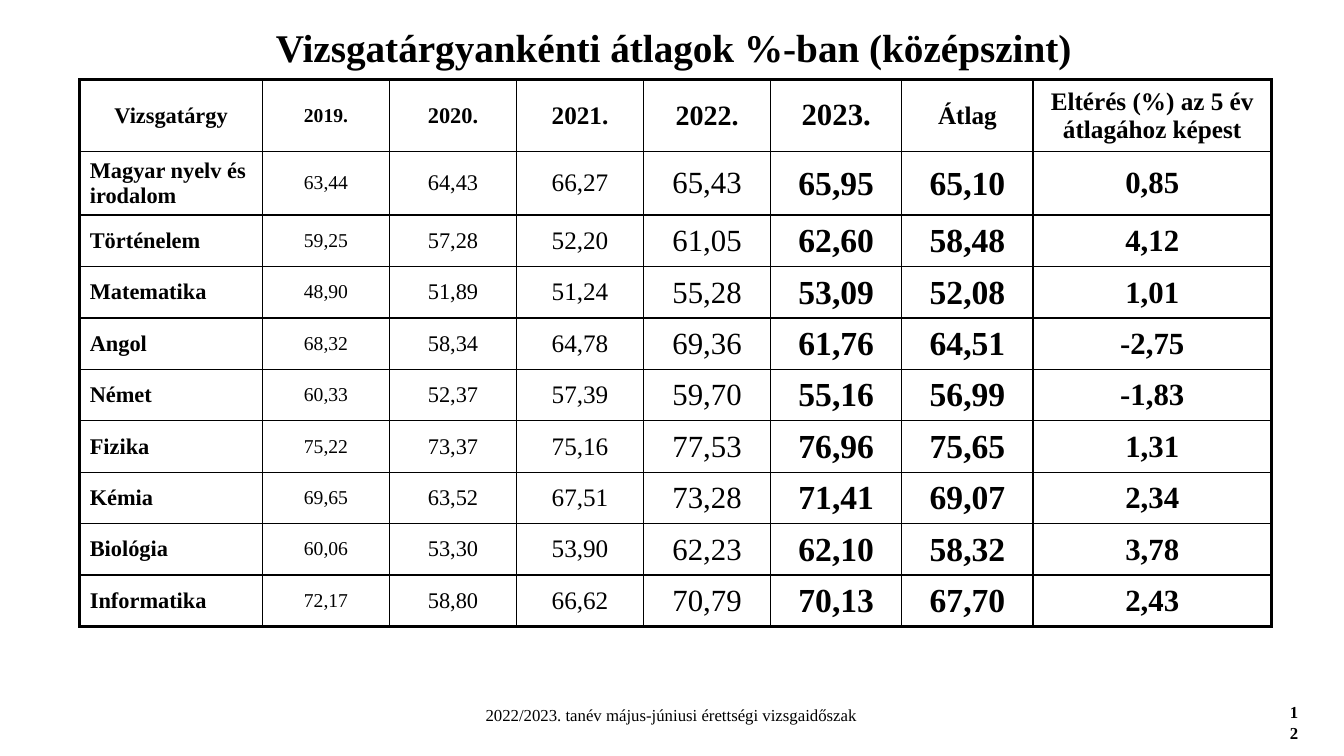
from lxml.etree import SubElement
from pptx import Presentation
from pptx.dml.color import RGBColor
from pptx.enum.text import MSO_ANCHOR as ANCHOR, MSO_AUTO_SIZE as AUTO, PP_ALIGN as ALIGN
from pptx.oxml.ns import qn
from pptx.util import Emu, Pt

BLACK = RGBColor(0x00, 0x00, 0x00)
FONT = "Times New Roman"
THIN, THICK = 1, 2.25

COLUMN_WIDTHS = [174] + [121] * 4 + [125] * 2 + [227]
ROW_HEIGHTS = [68, 57] + [49] * 8
HEADER_SIZES = [16, 14, 16, 18, 20, 22, 18, 18]
BODY_SIZES = [16, 14, 16, 18, 22, 24, 24, 22]
REGULAR_COLUMNS = range(1, 5)
TIGHT_COLUMNS = range(4, 8)

RESULTS = [
    ["Vizsgatárgy", "2019.", "2020.", "2021.", "2022.", "2023.", "Átlag",
     "Eltérés (%) az 5 év átlagához képest"],
    ["Magyar nyelv és irodalom", "63,44", "64,43", "66,27", "65,43", "65,95", "65,10", "0,85"],
    ["Történelem", "59,25", "57,28", "52,20", "61,05", "62,60", "58,48", "4,12"],
    ["Matematika", "48,90", "51,89", "51,24", "55,28", "53,09", "52,08", "1,01"],
    ["Angol", "68,32", "58,34", "64,78", "69,36", "61,76", "64,51", "-2,75"],
    ["Német", "60,33", "52,37", "57,39", "59,70", "55,16", "56,99", "-1,83"],
    ["Fizika", "75,22", "73,37", "75,16", "77,53", "76,96", "75,65", "1,31"],
    ["Kémia", "69,65", "63,52", "67,51", "73,28", "71,41", "69,07", "2,34"],
    ["Biológia", "60,06", "53,30", "53,90", "62,23", "62,10", "58,32", "3,78"],
    ["Informatika", "72,17", "58,80", "66,62", "70,79", "70,13", "67,70", "2,43"],
]


def px(n):
    return Emu(n * 9525)


class SlideBuilder:
    def __init__(self, prs, font, color):
        self.s = prs.slides.add_slide(prs.slide_layouts[5])
        self.font, self.color = font, color

    def set_text(self, tf, text, size, bold, align):
        tf.text = text
        p = tf.paragraphs[0]
        p.alignment = align
        for r in p.runs:
            r.font.name, r.font.size, r.font.bold = self.font, Pt(size), bold
            r.font.color.rgb = self.color
        return p

    def title(self, x, y, w, h, text, size):
        sp = self.s.shapes.title
        sp.left, sp.top, sp.width, sp.height = px(x), px(y), px(w), px(h)
        tf = sp.text_frame
        tf.auto_size, tf.vertical_anchor = AUTO.NONE, ANCHOR.MIDDLE
        self.set_text(tf, text, size, True, ALIGN.CENTER).line_spacing = 0.9

    def label(self, x, y, w, h, text, size, bold=False, align=ALIGN.LEFT):
        tf = self.s.shapes.add_textbox(px(x), px(y), px(w), px(h)).text_frame
        tf.word_wrap = True
        self.set_text(tf, text, size, bold, align)

    def borders(self, cell, **widths):
        """Draw the cell's sides, given in points as L, R, T and B."""
        tc_pr = cell._tc.get_or_add_tcPr()
        for side, width in widths.items():
            ln = SubElement(tc_pr, qn(f"a:ln{side}"), w=str(Pt(width)))
            fill = SubElement(ln, qn("a:solidFill"))
            SubElement(fill, qn("a:srgbClr"), val=str(self.color))

    def table(self, x, y, widths, heights, rows):
        last_row, last_col = len(heights) - 1, len(widths) - 1
        table = self.s.shapes.add_table(len(heights), len(widths), px(x), px(y),
                                        px(sum(widths)), px(sum(heights))).table
        table.first_row = table.horz_banding = False
        for column, width in zip(table.columns, widths):
            column.width = px(width)
        for row, height in zip(table.rows, heights):
            row.height = px(height)
        for i, row in enumerate(rows):
            for j, text in enumerate(row):
                cell = table.cell(i, j)
                self.borders(cell,
                             L=THICK if j == 0 else THIN,
                             R=THICK if j == last_col else THIN,
                             T=THICK if i == 0 else THIN,
                             B=THICK if i == last_row else THIN)
                cell.fill.background()
                cell.vertical_anchor = ANCHOR.MIDDLE
                is_header = i == 0
                if not is_header and j in TIGHT_COLUMNS:
                    cell.margin_left = cell.margin_top = cell.margin_right = px(1)
                    cell.margin_bottom = 0
                self.set_text(cell.text_frame, text,
                              (HEADER_SIZES if is_header else BODY_SIZES)[j],
                              is_header or j not in REGULAR_COLUMNS,
                              ALIGN.CENTER if is_header or j > 0 else ALIGN.LEFT)


def main():
    prs = Presentation()
    prs.slide_width, prs.slide_height = px(1280), px(720)
    slide = SlideBuilder(prs, FONT, BLACK)
    slide.label(1219, 664, 28, 29, "12", 12, bold=True)
    slide.label(345, 666, 589, 29, "2022/2023. tanév május-júniusi érettségi vizsgaidőszak",
                12, align=ALIGN.CENTER)
    slide.title(102, 19, 1079, 57, "Vizsgatárgyankénti átlagok %-ban (középszint)", 28)
    slide.table(76, 76, COLUMN_WIDTHS, ROW_HEIGHTS, RESULTS)
    prs.save("out.pptx")


if __name__ == "__main__":
    main()
